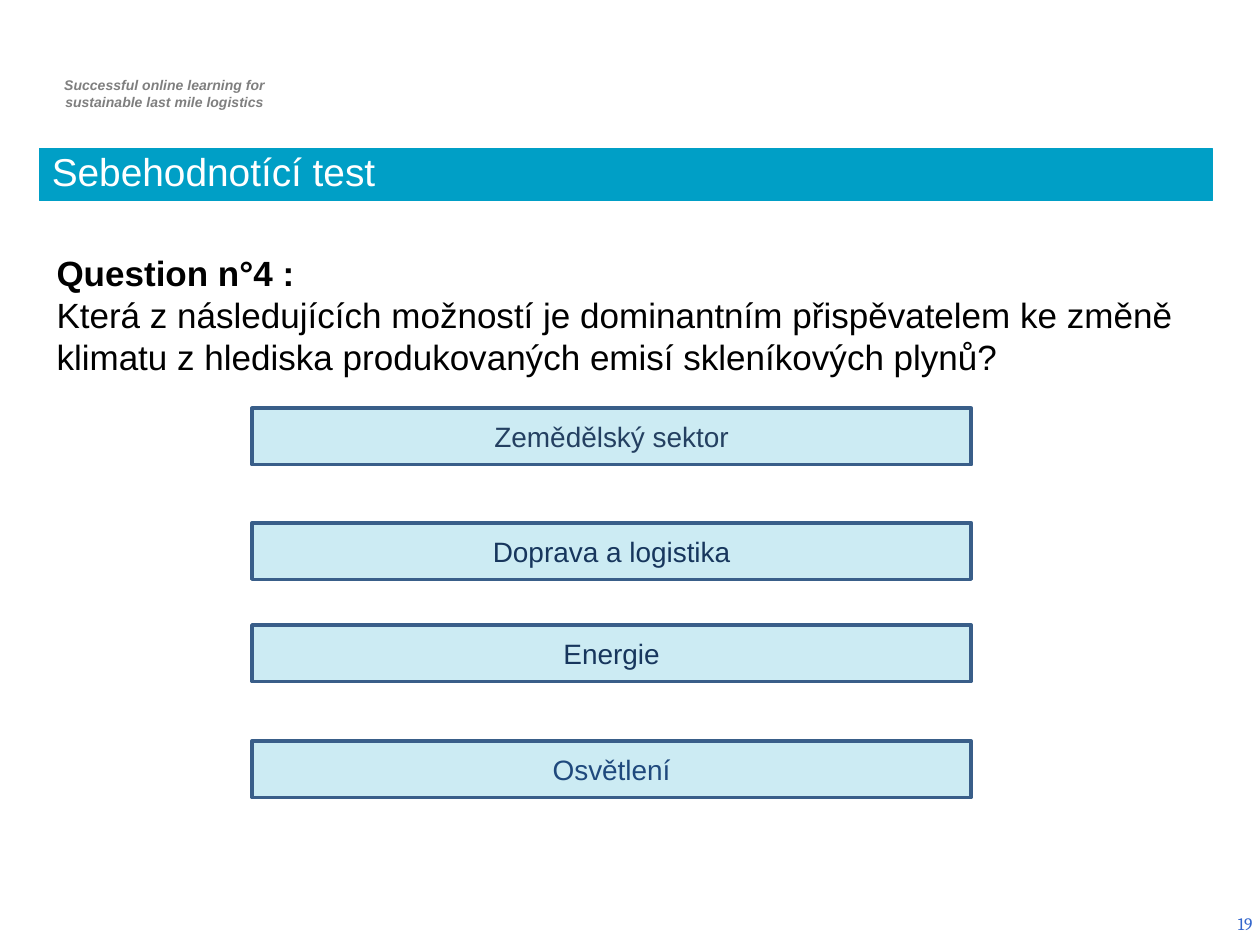
from dataclasses import dataclass

from lxml import etree
from pptx import Presentation
from pptx.dml.color import RGBColor
from pptx.enum.shapes import MSO_SHAPE
from pptx.enum.text import MSO_ANCHOR, MSO_AUTO_SIZE, PP_ALIGN
from pptx.oxml.ns import qn
from pptx.shapes.autoshape import Shape
from pptx.slide import Slide
from pptx.util import Cm, Pt

RECTANGLE = MSO_SHAPE.RECTANGLE
MIDDLE, BOTTOM, TOP = MSO_ANCHOR.MIDDLE, MSO_ANCHOR.BOTTOM, MSO_ANCHOR.TOP
LEFT, CENTER, RIGHT = PP_ALIGN.LEFT, PP_ALIGN.CENTER, PP_ALIGN.RIGHT
NO_AUTOFIT = MSO_AUTO_SIZE.NONE

COLORS = {
    "background": "FFFFFF",
    "banner": "009FC6",
    "banner_text": "FFFFFF",
    "tagline": "7F7F7F",
    "question": "000000",
    "answer_line": "395E89",
    "page_number": "3366CC",
}
ANSWER_LEFT, ANSWER_WIDTH, ANSWER_HEIGHT = 5.08, 14.5, 1.14
ANSWER_OPACITY = 20


@dataclass(frozen=True)
class Box:
    left: float
    top: float
    width: float
    height: float


@dataclass(frozen=True)
class Style:
    size: float
    color: str
    align: PP_ALIGN = LEFT
    font: str = "Arial"
    bold: bool = False
    italic: bool = False


@dataclass(frozen=True)
class Answer:
    text: str
    top: float
    color: str


ANSWERS = (
    Answer("Zemědělský sektor", 8.23, "244061"),
    Answer("Doprava a logistika", 10.54, "17365D"),
    Answer("Energie", 12.6, "17365D"),
    Answer("Osvětlení", 14.94, "1F497D"),
)


def rgb(color: str) -> RGBColor:
    return RGBColor.from_string(color)


def write(shape: Shape, lines: list[str], style: Style, anchor: MSO_ANCHOR) -> None:
    frame = shape.text_frame
    frame.text = "\n".join(lines)
    frame.word_wrap = True
    frame.auto_size = NO_AUTOFIT
    frame.vertical_anchor = anchor
    for paragraph in frame.paragraphs:
        paragraph.alignment = style.align
        font = paragraph.font
        font.name, font.size = style.font, Pt(style.size)
        font.bold, font.italic = style.bold, style.italic
        font.color.rgb = rgb(style.color)


def paint(shape: Shape, fill: str, line: str, line_width: float) -> None:
    shape.fill.solid()
    shape.fill.fore_color.rgb = rgb(fill)
    shape.line.color.rgb = rgb(line)
    shape.line.width = Pt(line_width)


def add_text(slide: Slide, box: Box, lines: list[str], style: Style,
             anchor: MSO_ANCHOR = TOP) -> Shape:
    shape = slide.shapes.add_textbox(
        Cm(box.left), Cm(box.top), Cm(box.width), Cm(box.height))
    write(shape, lines, style, anchor)
    return shape


def add_title(slide: Slide, box: Box, text: str) -> None:
    title = slide.shapes.title
    title.left, title.top = Cm(box.left), Cm(box.top)
    title.width, title.height = Cm(box.width), Cm(box.height)
    paint(title, COLORS["banner"], COLORS["banner"], 0.75)
    write(title, [text], Style(22.2, COLORS["banner_text"]), BOTTOM)
    title.text_frame.paragraphs[0].line_spacing = 0.8


def add_answer(slide: Slide, answer: Answer) -> None:
    shape = slide.shapes.add_shape(
        RECTANGLE, Cm(ANSWER_LEFT), Cm(answer.top), Cm(ANSWER_WIDTH), Cm(ANSWER_HEIGHT))
    shape.shadow.inherit = False
    paint(shape, COLORS["banner"], COLORS["answer_line"], 2)
    fill_color = shape.fill._xPr.find(qn("a:solidFill"))[0]
    etree.SubElement(fill_color, qn("a:alpha"), val=str(ANSWER_OPACITY * 1000))
    write(shape, [answer.text], Style(16, answer.color, CENTER), MIDDLE)


def main() -> None:
    presentation = Presentation()
    presentation.slide_width, presentation.slide_height = Cm(25.4), Cm(19.05)
    slide = presentation.slides.add_slide(presentation.slide_layouts[5])
    slide.background.fill.solid()
    slide.background.fill.fore_color.rgb = rgb(COLORS["background"])

    tagline = add_text(
        slide, Box(0.74, 1.42, 5.16, 0.94),
        ["Successful online learning for", "sustainable last mile logistics"],
        Style(8, COLORS["tagline"], CENTER, bold=True, italic=True))
    tagline.text_frame.paragraphs[1].runs[0].font.italic = True
    add_title(slide, Box(0.79, 3, 23.65, 1.04), "Sebehodnotící test")
    question = add_text(
        slide, Box(0.89, 4.95, 23.65, 2.82),
        ["Question n°4 :",
         "Která z následujících možností je dominantním přispěvatelem ke změně "
         "klimatu z hlediska produkovaných emisí skleníkových plynů?"],
        Style(20, COLORS["question"]))
    question.text_frame.paragraphs[0].font.bold = True
    for answer in ANSWERS:
        add_answer(slide, answer)
    add_text(slide, Box(19.58, 18.11, 5.92, 1.02), ["19"],
             Style(10, COLORS["page_number"], RIGHT, font="Cambria"), MIDDLE)

    presentation.save("out.pptx")


if __name__ == "__main__":
    main()
